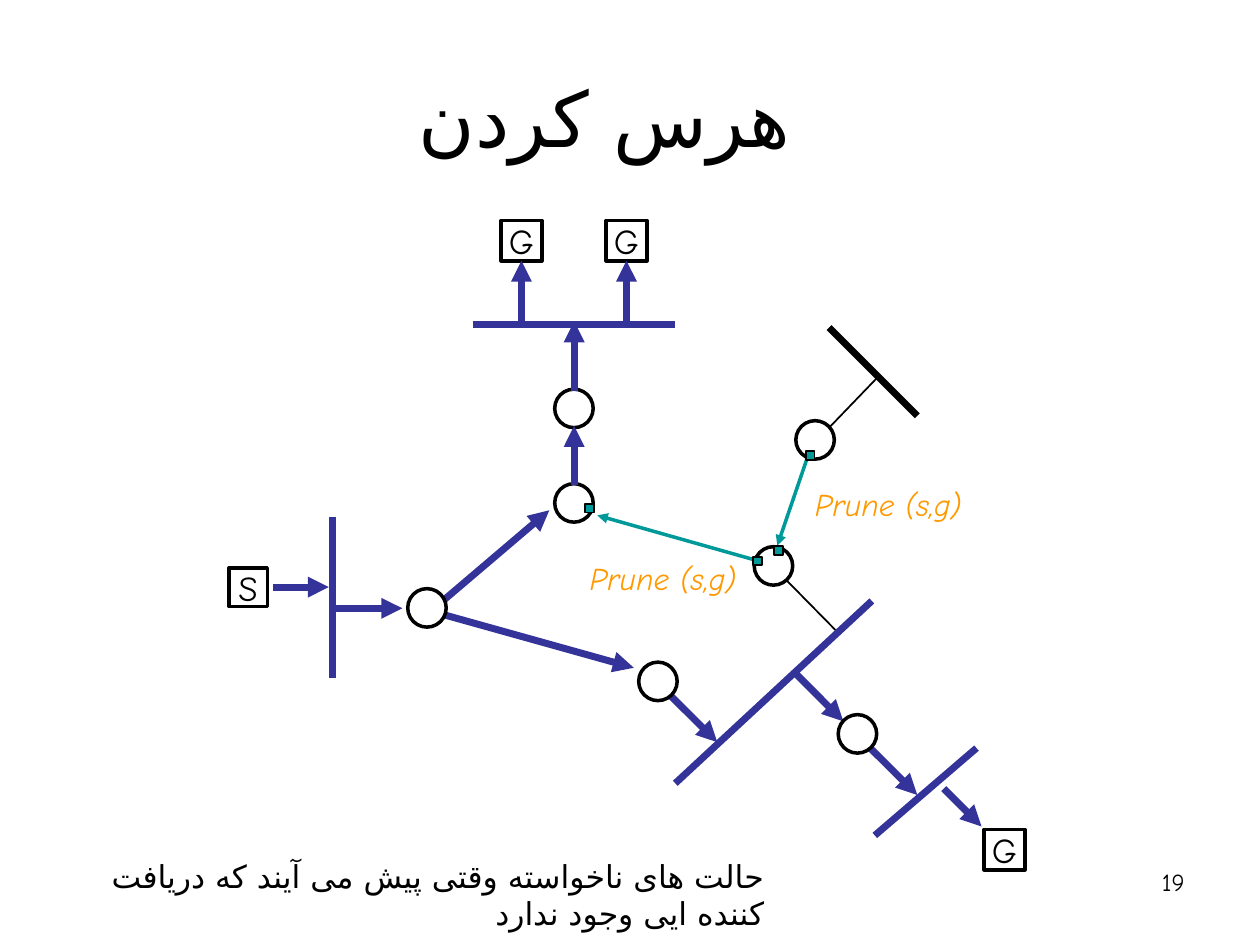
import pptx
import pptx.util
import pptx.dml.color
import pptx.enum.shapes
import pptx.enum.text
import pptx.oxml
import pptx.oxml.ns

Pt = pptx.util.Pt
RGBColor = pptx.dml.color.RGBColor
Shape = pptx.enum.shapes.MSO_SHAPE
Align = pptx.enum.text.PP_ALIGN
Anchor = pptx.enum.text.MSO_ANCHOR
qn = pptx.oxml.ns.qn

BLACK = RGBColor(0, 0, 0)
WHITE = RGBColor(255, 255, 255)
BLUE = RGBColor(0x33, 0x33, 0x99)
TEAL = RGBColor(0, 0x99, 0x99)
ORANGE = RGBColor(0xFF, 0x99, 0)
FONT = "Comic Neue"
PERSIAN_FONT = "DejaVu Sans"

# Content: coordinates in points, nodes by centre
TITLE = "هرس کردن"
FOOTNOTE = "حالت های ناخواسته وقتی پیش می آیند که دریافت کننده ایی وجود ندارد"
PAGE_NUMBER = "19"
PRUNE_LABELS = [("Prune (s,g)", 458.6, 273.6), ("Prune (s,g)", 329.8, 316.1)]

HOST_SIZE, ROUTER_SIZE, PORT_SIZE = 23, 22, 5
SOURCE = ("S", 141.8, 335.6)
TOP_RECEIVERS = [("G", 298, 137.5), ("G", 358, 137.5)]
CORNER_RECEIVER = ("G", 574, 485.5)
ROUTERS = [(328, 233.4), (328, 287.4), (244, 347.4), (442, 323.4),
           (465.8, 251.4), (376, 389.4), (490, 419.4)]
PORTS = [(337, 290.5), (445, 314.5), (463, 260.3), (433, 320.6)]

# Each line: start x, start y, end x, end y
IDLE_LINKS = [(465.8, 252.7, 501.8, 215.3), (442, 324, 477.4, 360)]
IDLE_NETWORKS = [(473.8, 187.2, 524.2, 237.6)]
ACTIVE_NETWORKS = [(270, 185.4, 385.9, 185.4), (190.1, 295.2, 190.1, 387.4),
                   (498.2, 343.4, 385.9, 447.6), (558, 427.5, 499.9, 477.4)]
FLOWS = [(156.2, 335.5, 187.9, 335.5), (192.2, 347.6, 229.9, 347.6),
         (246.2, 349.2, 313.9, 291.6), (246.2, 349.2, 362.2, 381.6),
         (377.3, 391.7, 409.9, 424.1), (455, 385.2, 481.9, 412.2),
         (491, 421.2, 524.2, 454.3), (539.3, 450.7, 560.9, 472.3)]
PRUNES = [(440.6, 322.6, 341.3, 294.5), (465.1, 250.6, 444.2, 311.8)]
UPWARD_FLOWS = [(328.1, 223.2, 328.1, 183.6), (328.1, 277.2, 328.1, 243.4)]
RECEIVER_FLOW_START = 187.2

deck = pptx.Presentation()
deck.slide_width, deck.slide_height = Pt(720), Pt(540)
page = deck.slides.add_slide(deck.slide_layouts[5])


def write(box, text, size, color=BLACK, align=Align.LEFT, rtl=False, italic=False):
    para = box.text_frame.paragraphs[0]
    para.alignment = align
    span = para.add_run()
    span.text = text
    span.font.name, span.font.size = FONT, Pt(size)
    span.font.color.rgb = color
    if italic:
        span.font.italic = True
    if rtl:
        para._p.get_or_add_pPr().set("rtl", "1")
        script_font = pptx.oxml.parse_xml(
            f'<a:cs {pptx.oxml.ns.nsdecls("a")} typeface="{PERSIAN_FONT}"/>')
        span.font._element.append(script_font)


def add_text(text, left, top, width, height, size, wrap=True, **style):
    box = page.shapes.add_textbox(Pt(left), Pt(top), Pt(width), Pt(height))
    box.text_frame.word_wrap = wrap
    write(box, text, size, **style)


def add_node(kind, x, y, size, fill, weight):
    node = page.shapes.add_shape(
        kind, Pt(x - size / 2), Pt(y - size / 2), Pt(size), Pt(size))
    node.shadow.inherit = False
    if fill is None:
        node.fill.background()
    else:
        node.fill.solid()
        node.fill.fore_color.rgb = fill
    node.line.color.rgb = BLACK
    node.line.width = Pt(weight)
    return node


def add_host(host, size=HOST_SIZE, fill=None, weight=2.25):
    letter, x, y = host
    node = add_node(Shape.RECTANGLE, x, y, size, fill, weight)
    node.text_frame.word_wrap = False
    node.text_frame.vertical_anchor = Anchor.MIDDLE
    write(node, letter, 20, align=Align.CENTER)
    return node


def add_line(ends, color, weight, arrow=False):
    line = page.shapes.add_connector(
        pptx.enum.shapes.MSO_CONNECTOR.STRAIGHT, *(Pt(value) for value in ends))
    line.line.color.rgb = color
    line.line.width = Pt(weight)
    properties = line._element.spPr
    if arrow:
        outline = properties.find(qn("a:ln"))
        outline.append(pptx.oxml.parse_xml(
            f'<a:tailEnd {pptx.oxml.ns.nsdecls("a")} type="triangle"/>'))
    properties.append(pptx.oxml.parse_xml(
        f'<a:effectLst {pptx.oxml.ns.nsdecls("a")}/>'))
    return line


# Title
title = page.shapes.title
title.left, title.top, title.width, title.height = Pt(36), Pt(33.8), Pt(619.2), Pt(66.2)
title.text_frame.auto_size = pptx.enum.text.MSO_AUTO_SIZE.NONE
title.text_frame.vertical_anchor = Anchor.MIDDLE
write(title, TITLE, 44, align=Align.CENTER, rtl=True)

# Lines that run underneath the routers
for group, color, weight, arrow in [
        (IDLE_LINKS, BLACK, 1, False), (FLOWS, BLUE, 4, True),
        (PRUNES, TEAL, 2, True), (IDLE_NETWORKS, BLACK, 4, False),
        (ACTIVE_NETWORKS, BLUE, 4, False)]:
    for ends in group:
        add_line(ends, color, weight, arrow)

# Routers and hosts
for x, y in ROUTERS:
    add_node(Shape.OVAL, x, y, ROUTER_SIZE, WHITE, 2)
add_host(SOURCE, ROUTER_SIZE, WHITE, 2)
add_host(CORNER_RECEIVER)

# Upward branch, drawn over the routers and into the top receivers
for ends in UPWARD_FLOWS:
    add_line(ends, BLUE, 4, True)
for receiver in TOP_RECEIVERS:
    host = add_host(receiver)
    x, y = receiver[1:]
    flow = add_line((x, RECEIVER_FLOW_START, x, y + HOST_SIZE / 2), BLUE, 4, True)
    flow.end_connect(host, 2)

# Pruned ports and their labels
for x, y in PORTS:
    add_node(Shape.RECTANGLE, x, y, PORT_SIZE, TEAL, 1)
for label, left, top in PRUNE_LABELS:
    add_text(label, left, top, 103, 28.8, 18, wrap=False, color=ORANGE, italic=True)

# Footnote and page number
add_text(FOOTNOTE, 16.2, 486, 427.7, 28.8, 18, align=Align.RIGHT, rtl=True)
add_text(PAGE_NUMBER, 516.2, 491.8, 167.8, 37.4, 14, align=Align.RIGHT)

deck.save("out.pptx")
